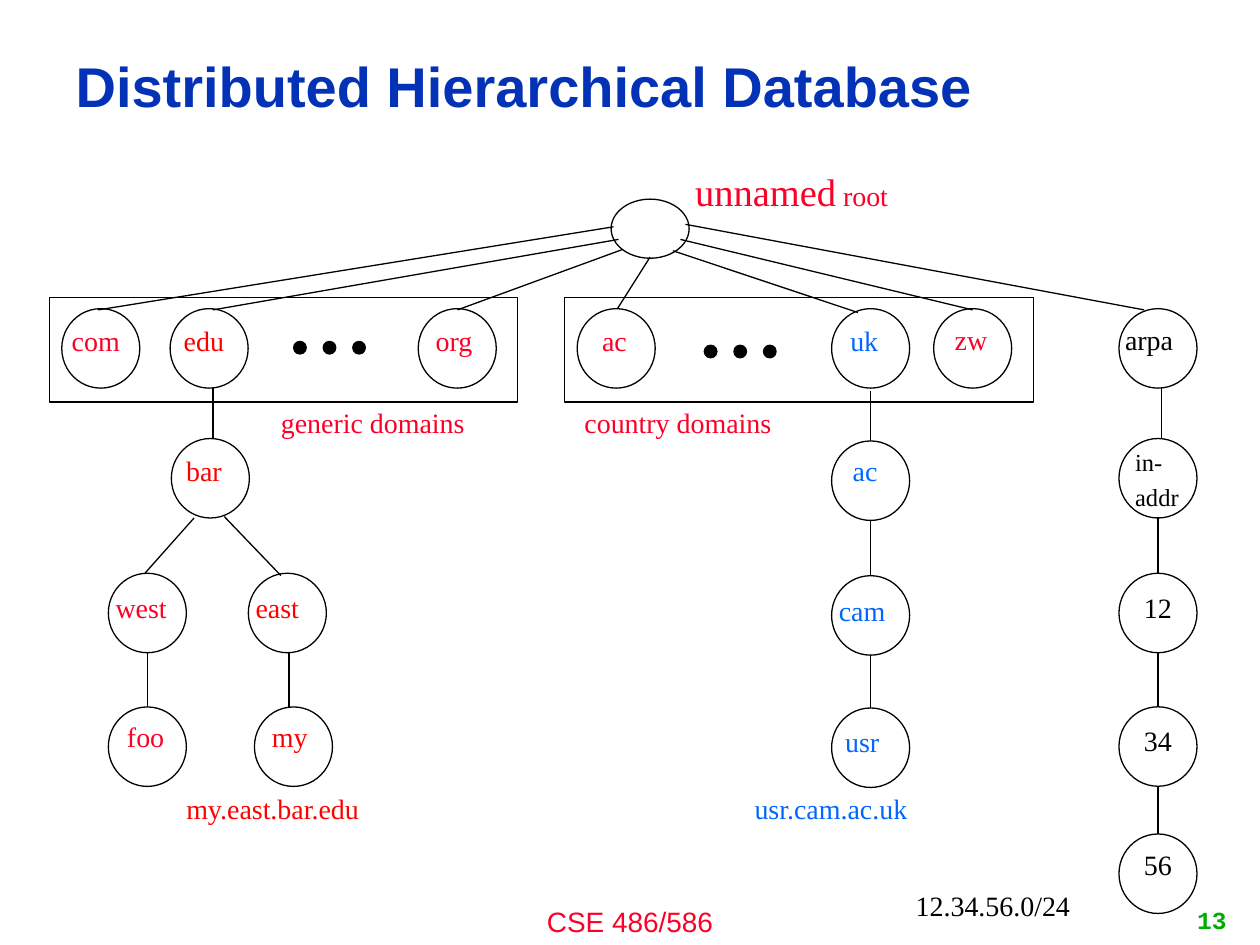
from lxml import etree
from pptx import Presentation
from pptx.dml.color import RGBColor
from pptx.enum.shapes import MSO_CONNECTOR, MSO_SHAPE
from pptx.enum.text import MSO_ANCHOR, PP_ALIGN
from pptx.oxml.ns import qn
from pptx.util import Pt

OVAL, RECT = MSO_SHAPE.OVAL, MSO_SHAPE.RECTANGLE
STRAIGHT = MSO_CONNECTOR.STRAIGHT
LEFT, CENTER, RIGHT = PP_ALIGN.LEFT, PP_ALIGN.CENTER, PP_ALIGN.RIGHT
TOP, MIDDLE = MSO_ANCHOR.TOP, MSO_ANCHOR.MIDDLE

COLORS = {"black": "000000", "crimson": "FC0128", "red": "FF0000",
          "blue": "0066FF", "title": "0332B7", "green": "00AE00"}
SERIF = "Times New Roman"
NODE_W, NODE_H = 44.6, 45.4
LINE_W = 0.75


def rgb(name):
    return RGBColor.from_string(COLORS[name])


def format_text(frame, paragraphs, size=16, font=SERIF, color="black", bold=False,
                align=LEFT, anchor=TOP, wrap=False, line_spacing=None, gap=0):
    """Fill a frame; each paragraph is a list of (text, size or None) runs."""
    frame.word_wrap = wrap
    frame.vertical_anchor = anchor
    for i, runs in enumerate(paragraphs):
        para = frame.paragraphs[0] if i == 0 else frame.add_paragraph()
        para.alignment = align
        para.line_spacing = line_spacing
        para.space_before = Pt(gap if i else 0)
        for words, run_size in runs:
            run = para.add_run()
            run.text = words
            run.font.size = Pt(run_size or size)
            run.font.name = font
            run.font.bold = bold
            run.font.color.rgb = rgb(color)


def add_text(slide, words, left, top, width=45, height=31, **style):
    box = slide.shapes.add_textbox(Pt(left), Pt(top), Pt(width), Pt(height))
    paragraphs = words if isinstance(words, list) else [[(words, None)]]
    format_text(box.text_frame, paragraphs, **style)


def add_outline(shapes, kind, left, top, width, height, fill=None):
    shape = shapes.add_shape(kind, Pt(left), Pt(top), Pt(width), Pt(height))
    shape.shadow.inherit = False
    if fill:
        shape.fill.solid()
        shape.fill.fore_color.rgb = rgb(fill)
    else:
        shape.fill.background()
    shape.line.color.rgb = rgb("black")
    shape.line.width = Pt(LINE_W)


def add_link(slide, x1, y1, x2, y2):
    link = slide.shapes.add_connector(STRAIGHT, Pt(x1), Pt(y1), Pt(x2), Pt(y2))
    link.line.color.rgb = rgb("black")
    link.line.width = Pt(LINE_W)
    etree.SubElement(link._element.spPr, qn("a:effectLst"))


def add_node(slide, left, top, label, dx, dy, color, **style):
    """A circle whose label box is shifted by (dx, dy) from its corner."""
    add_outline(slide.shapes, OVAL, left, top, NODE_W, NODE_H)
    add_text(slide, label, left + dx, top + dy, color=color, **style)


def add_dots(slide, left, top):
    group = slide.shapes.add_group_shape()
    for i in range(3):
        add_outline(group.shapes, OVAL, left + i * 16.9, top, 7.2, 7.2, fill="black")


def add_domain_box(slide, left, top, nodes, dots, caption, caption_dx):
    add_outline(slide.shapes, RECT, left, top, 267.8, 59.8)
    for x, *label in nodes:
        add_node(slide, left + x, top + 6.5, *label)
    add_dots(slide, left + dots[0], top + dots[1])
    add_text(slide, caption, left + caption_dx, top + 58.3, width=148, color="crimson")


def add_root(slide, left, top):
    add_outline(slide.shapes, OVAL, left, top, NODE_W, 33.8)
    add_text(slide, [[("unnamed", 22), (" root", 16)]], left + 41, top - 21.6,
             width=133, height=34, color="crimson")
    # Start on the root's rim, then end on each top-level domain
    for x1, y1, x2, y2 in [(1.4, 15.8, -293, 63.3), (4.3, 23, -227.5, 63.3),
                           (6.5, 28.8, -87.8, 63.3), (22.3, 33.1, 3.6, 62.6),
                           (42.5, 14.4, 304.6, 63.3), (39.6, 23, 206.6, 63.3),
                           (35.3, 29.5, 141.1, 64.8)]:
        add_link(slide, left + x1, top + y1, left + x2, top + y2)


def add_chain(slide, left, top, start, nodes, **style):
    """A column of nodes, each hung by a vertical link from the one above."""
    centre = left + NODE_W / 2
    above = start
    for y, *label in nodes:
        add_link(slide, centre, above, centre, top + y)
        add_node(slide, left, top + y, *label, **style)
        above = top + y + NODE_H


def add_edu_tree(slide, left, top):
    add_link(slide, left + 59.8, top - 28.8, left + 59.8, top)
    add_node(slide, left + 36, top, "bar", 1.4, 5, "red")
    add_link(slide, left + 49, top + 45.4, left + 20.9, top + 77)
    add_link(slide, left + 66.3, top + 44.6, left + 98.6, top + 78.3)
    add_node(slide, left, top + 77, "west", -2.9, 6.5, "crimson")
    add_node(slide, left + 80, top + 77, "east", -2.9, 6.5, "red")
    for x, dx, label, label_dx, color in [(22.3, 0, "foo", 3.6, "crimson"),
                                          (103.3, 83.5, "my", 2.9, "red")]:
        add_link(slide, left + x, top + 122.4, left + x, top + 153.4)
        add_node(slide, left + dx, top + 153.4, label, label_dx, 3.6, color)
    add_text(slide, "my.east.bar.edu", left + 37.5, top + 198, width=150, color="red")


def add_uk_tree(slide, left, top):
    add_chain(slide, left, top, top - 28.8,
              [(0, "ac", 5, 3.6, "blue"), (77, "cam", -2.9, 6.5, "blue"),
               (152.6, "usr", 0.7, 5.8, "blue")])
    add_text(slide, "usr.cam.ac.uk", left - 51.1, top + 196.6, width=134, color="blue")


def add_arpa_tree(slide, left, top):
    add_node(slide, left, top, "arpa", -3.6, 4.3, "black")
    add_link(slide, left + 24.4, top + 44.6, left + 24.4, top + 74.2)
    add_node(slide, left, top + 74.2, [[("in-", None)], [("addr", None)]],
             2.2, 4.3, "black", size=14, line_spacing=0.8, gap=7)
    add_chain(slide, left, top, top + 119,
              [(151.2, "12", 7.2, 6.5, "black"), (227.5, "34", 7.2, 5.8, "black"),
               (300.2, "56", 7.2, 4.3, "black")])
    add_text(slide, "12.34.56.0/24", left - 123.2, top + 327.6, width=125)


def add_title(slide, left, top, width, height):
    title = slide.shapes.title
    title.left, title.top, title.width, title.height = map(Pt, (left, top, width, height))
    format_text(title.text_frame, [[("Distributed Hierarchical Database", None)]],
                size=32, font="Arial", color="title", bold=True, anchor=MIDDLE,
                wrap=True, line_spacing=0.9)


def add_footer(slide, left, top, width):
    add_text(slide, "CSE 486/586", left, top, width=width, height=27, font="Arial",
             color="crimson", align=CENTER, wrap=True)
    add_text(slide, "13", left + 300, top - 2.2, width=168, height=28.8, size=14,
             font="Courier New", color="green", bold=True, align=RIGHT,
             anchor=MIDDLE, wrap=True)


def main():
    prs = Presentation()
    prs.slide_width, prs.slide_height = Pt(720), Pt(540)
    slide = prs.slides.add_slide(prs.slide_layouts[5])

    add_title(slide, 36, 5.8, 648, 90)
    # Top-level domains
    add_domain_box(slide, 28.1, 169.9,
                   [(7.2, "com", -1.4, 5, "crimson"), (69.1, "edu", 0.7, 5, "red"),
                    (210.9, "org", 2.9, 5, "crimson")],
                   (139.7, 25.2), "generic domains", 125.3)
    add_domain_box(slide, 322.6, 169.9,
                   [(7.2, "ac", 7.2, 5, "crimson"), (152.6, "uk", 3.6, 5, "blue"),
                    (210.9, "zw", 5, 4.3, "crimson")],
                   (79.9, 27.4), "country domains", 4.3)
    add_root(slide, 349.2, 113.8)
    # Subtrees
    add_edu_tree(slide, 61.9, 250.6)
    add_uk_tree(slide, 475.2, 252)
    add_arpa_tree(slide, 639.4, 176.4)
    add_footer(slide, 240, 513.4, 240)

    prs.save("out.pptx")


if __name__ == "__main__":
    main()
